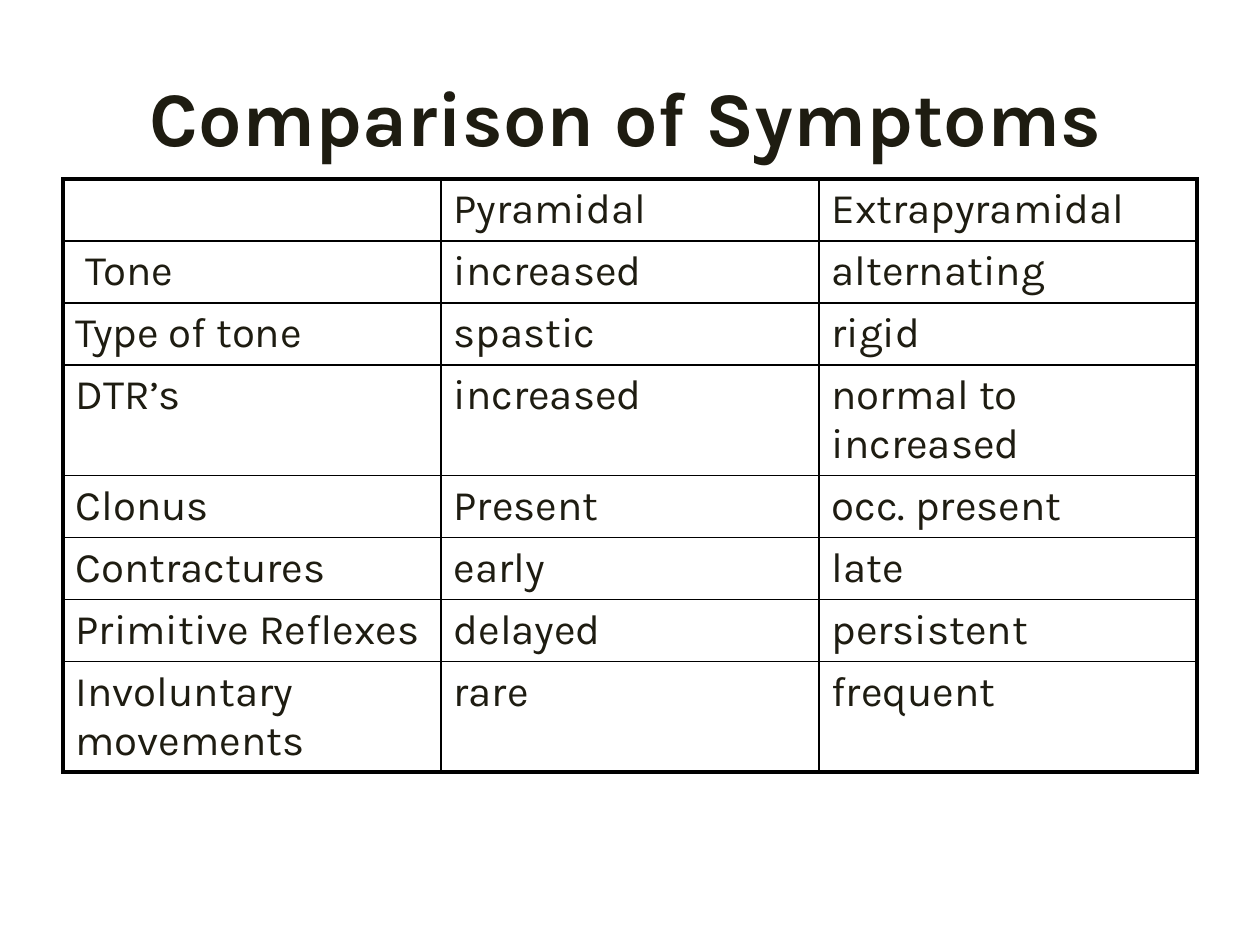
from dataclasses import dataclass
from typing import Any

from lxml import etree
from pptx import Presentation
from pptx import util as u
from pptx.dml.color import RGBColor
from pptx.enum import text
from pptx.oxml.ns import qn

COLORS = {"ink": "1E1C11", "rule": "000000", "paper": "FFFFFF"}
PX = u.Inches(1) / 126
THIN, THICK = 1, 2.25
TONE_INDENT = 10

SYMPTOMS = [
    ["", "Pyramidal", "Extrapyramidal"],
    ["Tone", "increased", "alternating"],
    ["Type of tone", "spastic", "rigid"],
    ["DTR’s", "increased", "normal to increased"],
    ["Clonus", "Present", "occ. present"],
    ["Contractures", "early", "late"],
    ["Primitive Reflexes", "delayed", "persistent"],
    ["Involuntary movements", "rare", "frequent"],
]
TWO_LINE_ROWS = {3, 7}


def px(length):
    return u.Emu(round(length * PX))


@dataclass
class SlideStyle:
    page: Any
    font: str = "Karla"

    def background(self):
        fill = self.page.background.fill
        fill.solid()
        fill.fore_color.rgb = RGBColor.from_string(COLORS["paper"])

    def format(self, para, size, bold=False):
        para.font.name = self.font
        para.font.size = u.Pt(size)
        para.font.bold = bold
        para.font.color.rgb = RGBColor.from_string(COLORS["ink"])

    def title(self, words, left, top, width, height):
        box = self.page.shapes.title
        box.left, box.top, box.width, box.height = map(px, (left, top, width, height))
        frame = box.text_frame
        frame.word_wrap = True
        frame.vertical_anchor = text.MSO_ANCHOR.MIDDLE
        para = frame.paragraphs[0]
        para.text = words
        para.alignment = text.PP_ALIGN.CENTER
        self.format(para, 44, bold=True)

    def borders(self, cell, widths):
        properties = cell._tc.get_or_add_tcPr()
        for position, (side, points) in enumerate(widths.items()):
            line = etree.Element(qn(f"a:ln{side}"), w=str(u.Pt(points)))
            fill = etree.SubElement(line, qn("a:solidFill"))
            etree.SubElement(fill, qn("a:srgbClr"), val=COLORS["rule"])
            properties.insert(position, line)

    def table(self, rows, left, top, column_width, row_heights):
        count, columns = len(rows), len(rows[0])
        table = self.page.shapes.add_table(
            count, columns, px(left), px(top),
            px(column_width * columns), px(sum(row_heights))).table
        table.first_row = table.horz_banding = False
        for column in table.columns:
            column.width = px(column_width)
        for r, (words, height) in enumerate(zip(rows, row_heights)):
            table.rows[r].height = px(height)
            for c, word in enumerate(words):
                cell = table.cell(r, c)
                cell.fill.background()
                self.borders(cell, {
                    "L": THICK if c == 0 else THIN,
                    "R": THICK if c == columns - 1 else THIN,
                    "T": THICK if r == 0 else THIN,
                    "B": THICK if r == count - 1 else THIN,
                })
                para = cell.text_frame.paragraphs[0]
                para.text = word
                self.format(para, 24)
        return table


def main():
    deck = Presentation()
    deck.slide_width, deck.slide_height = px(1260), px(945)
    slide = SlideStyle(deck.slides.add_slide(deck.slide_layouts[5]))
    slide.background()
    slide.title("Comparison of Symptoms", 59, 21, 1134, 189)
    heights = [110 if r in TWO_LINE_ROWS else 62 for r in range(len(SYMPTOMS))]
    table = slide.table(SYMPTOMS, 63, 179, 378, heights)
    tone = table.cell(1, 0)
    tone.margin_left = u.Emu(tone.margin_left + px(TONE_INDENT))
    deck.save("out.pptx")


if __name__ == "__main__":
    main()
